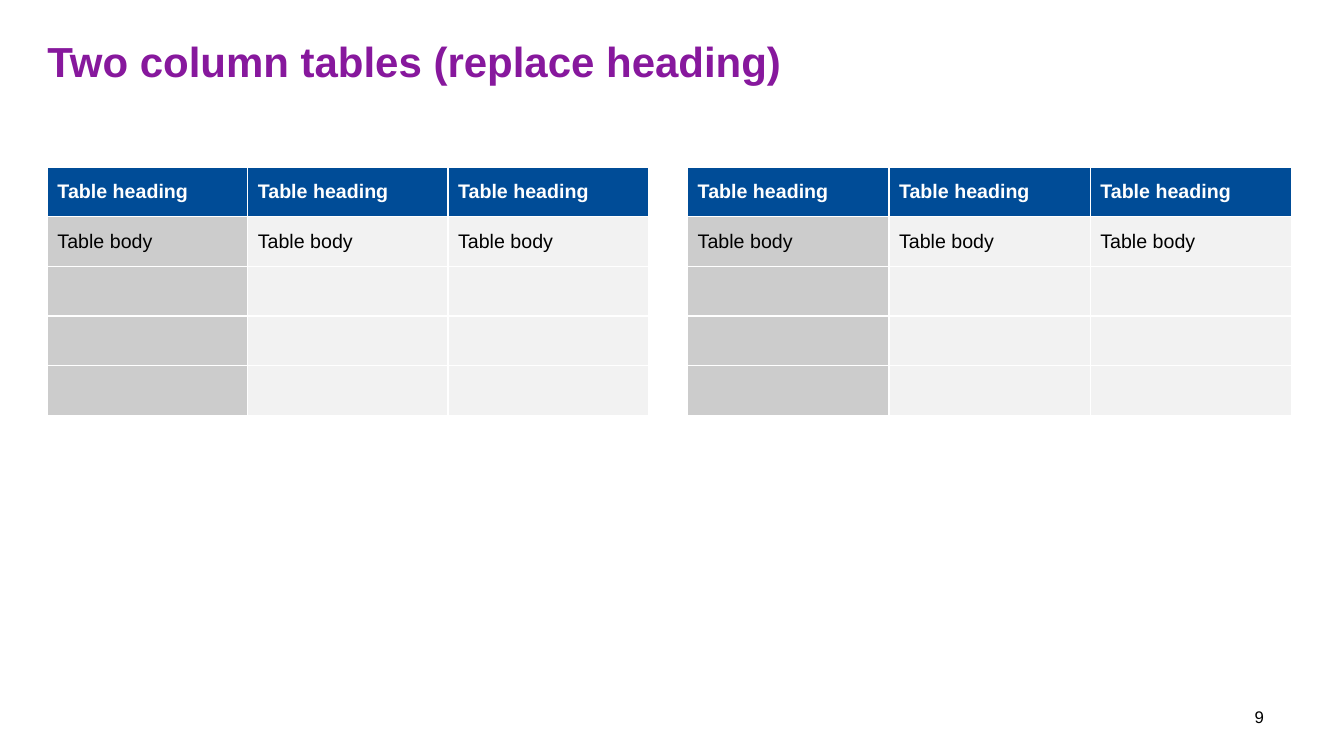
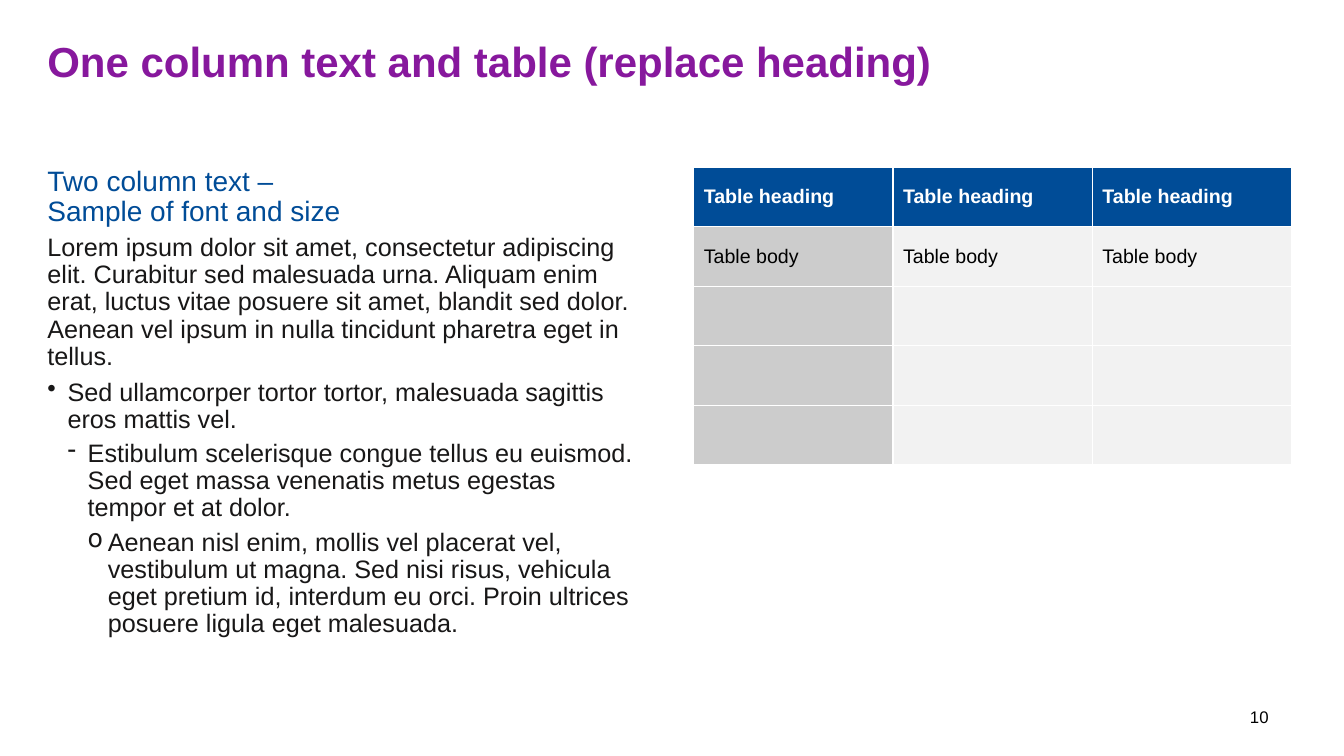
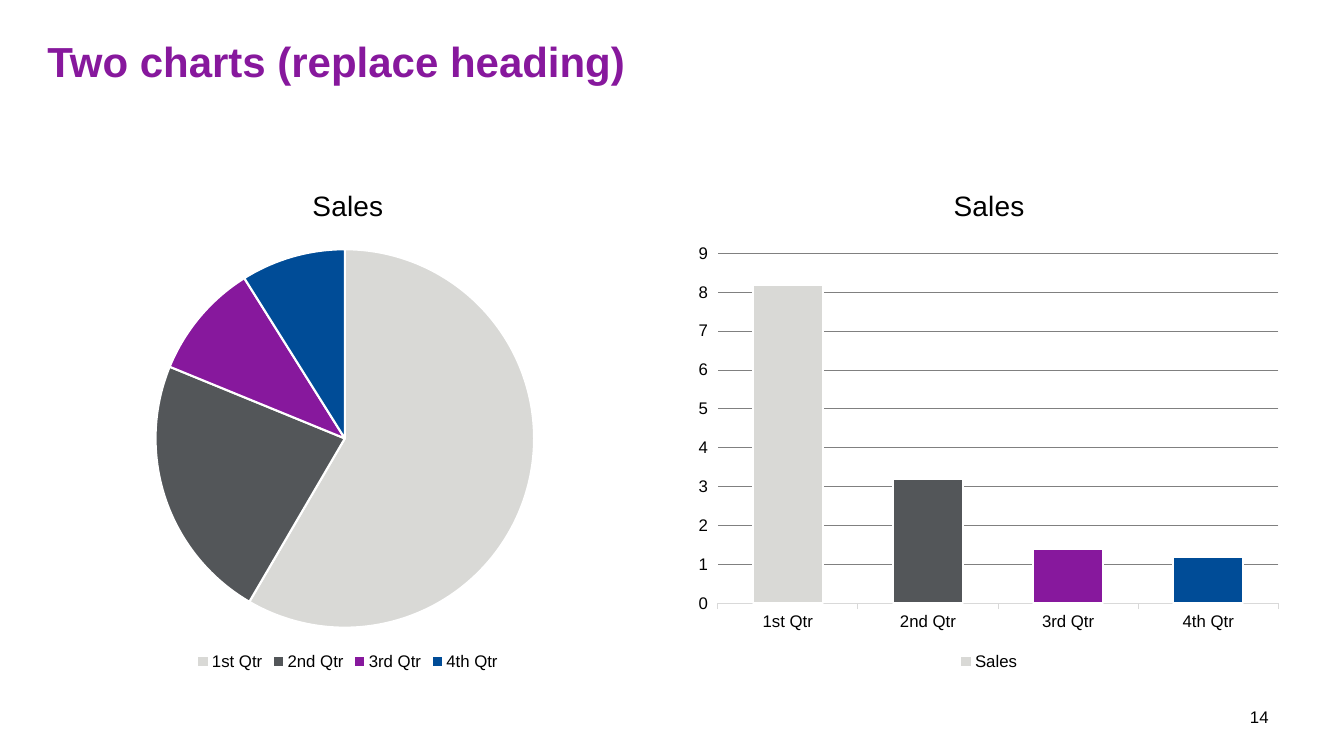
"""Build three template slides: two tables, text beside a table, and two charts."""
from dataclasses import dataclass

from lxml import etree
from pptx import Presentation
from pptx.chart.data import CategoryChartData
from pptx.dml.color import RGBColor
from pptx.enum.chart import XL_CHART_TYPE, XL_LEGEND_POSITION, XL_TICK_MARK
from pptx.enum.text import MSO_ANCHOR, PP_ALIGN
from pptx.oxml.ns import qn
from pptx.util import Pt

PIE, COLUMN = XL_CHART_TYPE.PIE, XL_CHART_TYPE.COLUMN_CLUSTERED
BOTTOM, OUTSIDE = XL_LEGEND_POSITION.BOTTOM, XL_TICK_MARK.OUTSIDE
LEFT, CENTER = PP_ALIGN.LEFT, PP_ALIGN.CENTER
TOP, MIDDLE = MSO_ANCHOR.TOP, MSO_ANCHOR.MIDDLE
PX = 9144


@dataclass(frozen=True)
class Theme:
    font: str = "Arial"
    purple: RGBColor = RGBColor.from_string("87189D")
    blue: RGBColor = RGBColor.from_string("004C97")
    slate: RGBColor = RGBColor.from_string("535659")
    stone: RGBColor = RGBColor.from_string("D9D9D6")
    ink: RGBColor = RGBColor.from_string("181717")
    black: RGBColor = RGBColor.from_string("000000")
    white: RGBColor = RGBColor.from_string("FFFFFF")
    first_column: RGBColor = RGBColor.from_string("CCCCCC")
    body_cell: RGBColor = RGBColor.from_string("F2F2F2")
    grid: RGBColor = RGBColor.from_string("808080")
    axis: RGBColor = RGBColor.from_string("D9D9D9")
    title_size: int = 30
    heading_size: int = 20
    body_size: int = 18
    table_size: int = 14
    small_size: int = 12


THEME = Theme()


def style_font(font, size, color, bold=False):
    for name, value in {"name": THEME.font, "size": Pt(size), "bold": bold}.items():
        setattr(font, name, value)
    font.color.rgb = color


def add_text(page, area, lines, size, color, bold=False, margin=None, anchor=TOP, align=LEFT, spacing=None):
    box = page.shapes.add_textbox(*(length * PX for length in area))
    frame = box.text_frame
    frame.word_wrap = True
    frame.vertical_anchor = anchor
    if margin is not None:
        for side in ("left", "top", "right", "bottom"):
            setattr(frame, f"margin_{side}", margin * PX)
    for index, line in enumerate(lines):
        para = frame.add_paragraph() if index else frame.paragraphs[0]
        para.text = line
        para.alignment = align
        para.line_spacing = spacing
        for span in para.runs:
            style_font(span.font, size, color, bold)
    return frame


TITLES = [
    ("Two column tables (replace heading)", 9),
    ("One column text and table (replace heading)", 10),
    ("Two charts (replace heading)", 14),
]
TABLES = [
    (0, (47, 166, 596, 246)),
    (0, (682, 166, 599, 246)),
    (1, (688, 166, 593, 295)),
]
ROWS, COLUMNS = 5, 3
BODY = [
    "Two column text – \vSample of font and size",
    "Lorem ipsum dolor sit amet, consectetur adipiscing elit. Curabitur sed malesuada urna. "
    "Aliquam enim erat, luctus vitae posuere sit amet, blandit sed dolor. "
    "Aenean vel ipsum in nulla tincidunt pharetra eget in tellus.",
    "Sed ullamcorper tortor tortor, malesuada sagittis eros mattis vel.",
    "Estibulum scelerisque congue tellus eu euismod. "
    "Sed eget massa venenatis metus egestas tempor et at dolor.",
    "Aenean nisl enim, mollis vel placerat vel, vestibulum ut magna. Sed nisi risus, "
    "vehicula eget pretium id, interdum eu orci. Proin ultrices posuere ligula eget malesuada.",
]
SPACE_BEFORE = [10, 5, 6, 5, 5]
BULLETS = [None, None, "•", "-", "o"]
BULLET_STEP = 20
QUARTERS = ["1st Qtr", "2nd Qtr", "3rd Qtr", "4th Qtr"]
QUARTER_COLORS = [THEME.stone, THEME.slate, THEME.purple, THEME.blue]
CHARTS = [
    (COLUMN, (682, 166, 598, 503), "Sales", [8.2, 3.2, 1.4, 1.2],
     {"x": 0.05, "y": 0.17, "w": 0.93, "h": 0.69}),
    (PIE, (47, 166, 596, 503), "Series 1", [59, 23, 10, 9],
     {"x": 0.18, "y": 0.16, "w": 0.63, "h": 0.75}),
]

deck = Presentation()
deck.slide_width, deck.slide_height = 1333 * PX, 750 * PX
pages = []
for title, number in TITLES:
    page = deck.slides.add_slide(deck.slide_layouts[6])
    add_text(page, (1217, 691, 64, 40), [str(number)], THEME.small_size, THEME.black,
             anchor=MIDDLE, align=CENTER)
    add_text(page, (47, 41, 1234, 86), [title], THEME.title_size, THEME.purple,
             bold=True, margin=0, spacing=0.9)
    pages.append(page)

body = add_text(pages[1], (47, 166, 588, 504), BODY, THEME.body_size, THEME.ink, margin=0, spacing=0.9)
for level, para in enumerate(body.paragraphs):
    para.level = level
    para.space_before = Pt(SPACE_BEFORE[level])
    bullet = BULLETS[level]
    properties = para._p.get_or_add_pPr()
    properties.set("marL", str(max(level - 1, 0) * BULLET_STEP * PX))
    properties.set("indent", str(-BULLET_STEP * PX if bullet else 0))
    if bullet:
        etree.SubElement(properties, qn("a:buChar")).set("char", bullet)
    else:
        etree.SubElement(properties, qn("a:buNone"))
for span in body.paragraphs[0].runs:
    style_font(span.font, THEME.heading_size, THEME.blue)

for page_index, area in TABLES:
    table = pages[page_index].shapes.add_table(ROWS, COLUMNS, *(length * PX for length in area)).table
    table.horz_banding = False
    for row in range(ROWS):
        for column in range(COLUMNS):
            cell = table.cell(row, column)
            cell.vertical_anchor = MIDDLE
            cell.fill.solid()
            if row == 0:
                cell.fill.fore_color.rgb = THEME.blue
            else:
                cell.fill.fore_color.rgb = THEME.body_cell if column else THEME.first_column
            if row < 2:
                cell.text = "Table body" if row else "Table heading"
                style_font(cell.text_frame.paragraphs[0].runs[0].font, THEME.table_size,
                           THEME.black if row else THEME.white, bold=row == 0)

for kind, area, series_name, values, plot_area in CHARTS:
    data = CategoryChartData()
    data.categories = QUARTERS
    data.add_series(series_name, values)
    chart = pages[2].shapes.add_chart(kind, *(length * PX for length in area), data).chart
    style_font(chart.font, THEME.small_size, THEME.black)
    chart.has_title = True
    chart.chart_title.text_frame.text = "Sales"
    style_font(chart.chart_title.text_frame.paragraphs[0].runs[0].font, THEME.heading_size, THEME.black)
    chart.has_legend = True
    chart.legend.position = BOTTOM
    chart.legend.include_in_layout = False
    style_font(chart.legend.font, THEME.small_size, THEME.black)

    plot = chart.plots[0]
    plot.vary_by_categories = kind == PIE
    series = plot.series[0]
    parts = [series.points[index].format for index in range(len(QUARTERS))]
    colored = list(zip(parts, QUARTER_COLORS))
    if kind == COLUMN:
        colored.insert(0, (series.format, THEME.stone))
    for part, color in colored:
        part.fill.solid()
        part.fill.fore_color.rgb = color
        part.line.color.rgb = THEME.white
        part.line.width = Pt(1.5)

    plot_node = chart._chartSpace.chart.plotArea
    for old_layout in plot_node.findall(qn("c:layout")):
        plot_node.remove(old_layout)
    layout = etree.Element(qn("c:layout"))
    plot_node.insert(0, layout)
    manual = etree.SubElement(layout, qn("c:manualLayout"))
    settings = {"layoutTarget": "inner", "xMode": "edge", "yMode": "edge", **plot_area}
    for name, value in settings.items():
        etree.SubElement(manual, qn(f"c:{name}")).set("val", str(value))

    if kind == COLUMN:
        plot.gap_width = 100
        for axis in (chart.category_axis, chart.value_axis):
            axis.major_tick_mark = OUTSIDE
            style_font(axis.tick_labels.font, THEME.small_size, THEME.black)
        chart.value_axis.format.line.fill.background()
        chart.value_axis.has_major_gridlines = True
        grid = chart.value_axis.major_gridlines.format.line
        for line, color in ((chart.category_axis.format.line, THEME.axis), (grid, THEME.grid)):
            line.color.rgb = color
            line.width = Pt(0.75)
        for name, value in {"minimum_scale": 0, "maximum_scale": 9, "major_unit": 1}.items():
            setattr(chart.value_axis, name, value)

deck.save("out.pptx")
